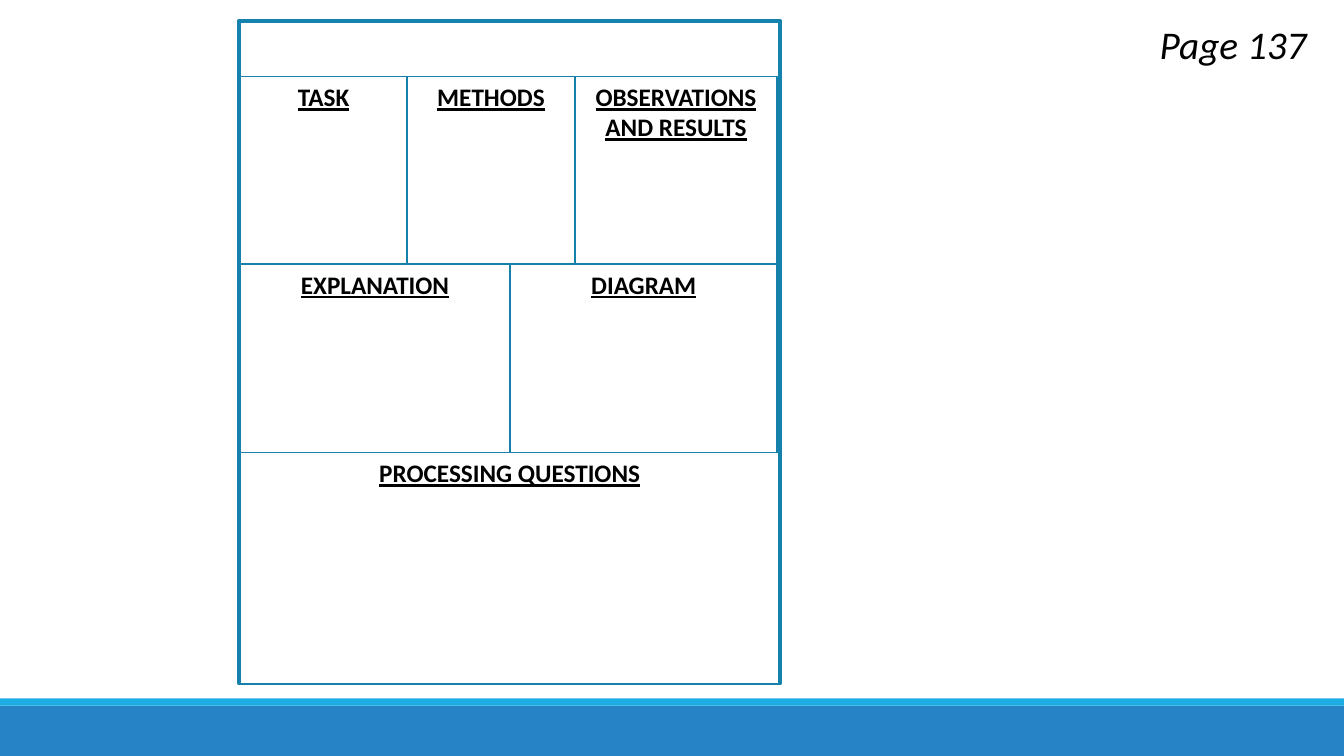
import pptx
import pptx.util
import pptx.dml.color
import pptx.enum.shapes
import pptx.enum.text

PAGE_LABEL = "Page 137"
# Each row: height, then its cells as (width, heading)
NOTEBOOK_ROWS = [
    (1.86, [(1.66, "TASK"), (1.66, "METHODS"), (2.01, "OBSERVATIONS AND RESULTS")]),
    (1.87, [(2.68, "EXPLANATION"), (2.65, "DIAGRAM")]),
    (2.3, [(5.35, "PROCESSING QUESTIONS")]),
]

SLIDE_WIDTH, SLIDE_HEIGHT = 13.33, 7.5
FRAME = (2.37, 0.21, 5.37, 6.57)
GRID_LEFT, GRID_TOP = 2.38, 0.76
LABEL_BOX = (10.43, 0.21, 3.5, 3.7)
FOOTER_BANDS = [(7, 0.5, "footer"), (6.93, 0.07, "accent")]

THEME = {
    "colors": {"paper": "FFFFFF", "ink": "000000", "footer": "2683C6",
               "accent": "1CADE4", "frame": "1482AC", "cell": "1580A9"},
    "heading": {"name": "Calibri", "size": pptx.util.Pt(18), "bold": True, "underline": True},
    "label": {"name": "Calibri", "size": pptx.util.Pt(28), "italic": True},
    "frame_line": 3,
    "cell_line": 1.25,
}


def color(name):
    return pptx.dml.color.RGBColor.from_string(THEME["colors"][name])


def inches(lengths):
    return [pptx.util.Inches(length) for length in lengths]


def add_box(page, place, fill, line=None, line_width=0):
    box = page.shapes.add_shape(pptx.enum.shapes.MSO_SHAPE.RECTANGLE, *inches(place))
    box.shadow.inherit = False
    box.fill.solid()
    box.fill.fore_color.rgb = color(fill)
    if line:
        box.line.color.rgb = color(line)
        box.line.width = pptx.util.Pt(line_width)
    else:
        box.line.fill.background()
    return box


def write(box, text, style):
    """Put one centred line of text at the top of a box."""
    box.text_frame.word_wrap = True
    box.text_frame.vertical_anchor = pptx.enum.text.MSO_ANCHOR.TOP
    para = box.text_frame.paragraphs[0]
    para.alignment = pptx.enum.text.PP_ALIGN.CENTER
    span = para.add_run()
    span.text = text
    span.font.color.rgb = color("ink")
    for key, value in THEME[style].items():
        setattr(span.font, key, value)
    return para


def add_page_label(page):
    box = page.shapes.add_textbox(*inches(LABEL_BOX))
    box.text_frame.margin_left = pptx.util.Inches(0.2)
    write(box, PAGE_LABEL, "label").line_spacing = 0.9


def add_notebook(page):
    add_box(page, FRAME, "paper", "frame", THEME["frame_line"])
    top = GRID_TOP
    for height, cells in NOTEBOOK_ROWS:
        left = GRID_LEFT
        for width, heading in cells:
            cell = add_box(page, (left, top, width, height), "paper", "cell", THEME["cell_line"])
            write(cell, heading, "heading")
            left += width
        top += height


def main():
    deck = pptx.Presentation()
    deck.slide_width, deck.slide_height = inches((SLIDE_WIDTH, SLIDE_HEIGHT))
    page = deck.slides.add_slide(deck.slide_layouts[6])
    for top, height, fill in FOOTER_BANDS:
        add_box(page, (0, top, SLIDE_WIDTH, height), fill)
    add_page_label(page)
    add_notebook(page)
    deck.save("out.pptx")


if __name__ == "__main__":
    main()
